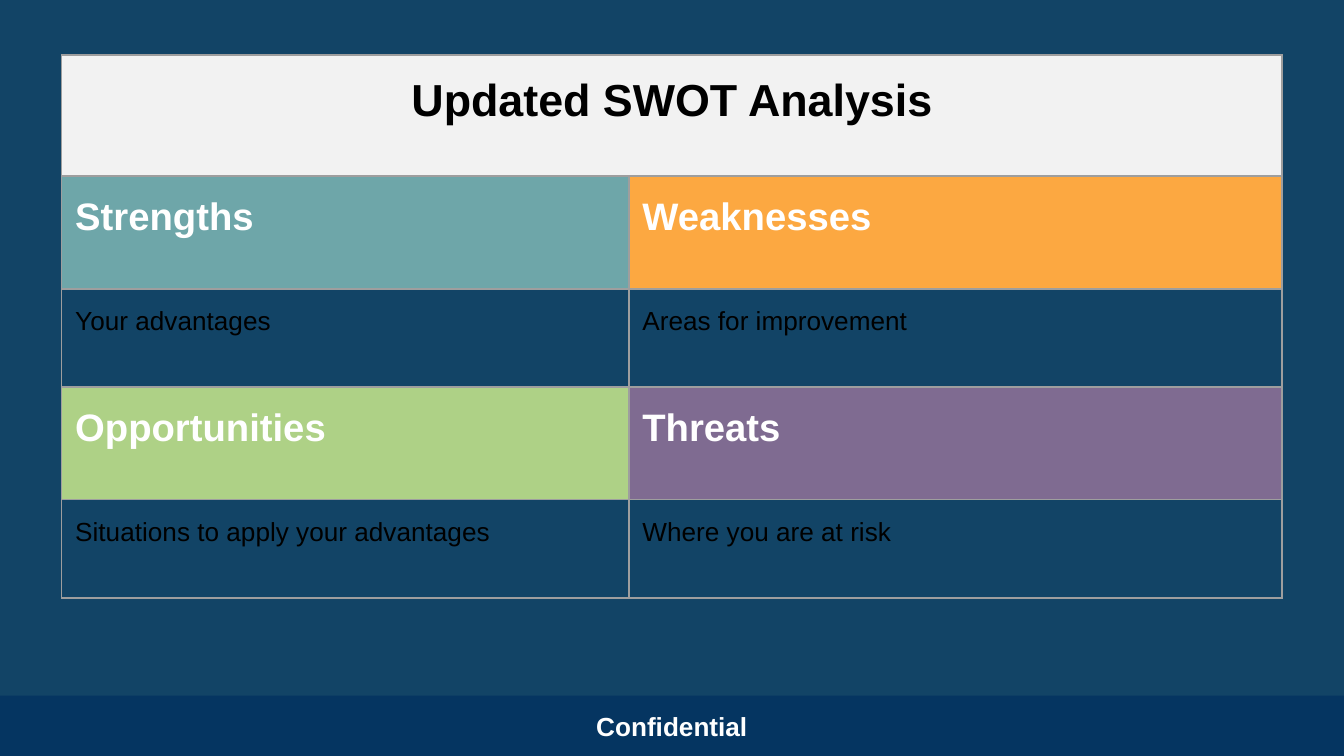
from dataclasses import dataclass

from lxml.etree import SubElement
from pptx import Presentation
from pptx.dml.color import RGBColor
from pptx.enum.shapes import MSO_SHAPE
from pptx.enum.text import MSO_ANCHOR, PP_ALIGN
from pptx.oxml.ns import qn
from pptx.util import Inches, Pt


@dataclass(frozen=True)
class Theme:
    """Colours, font and type sizes of the slide."""

    background: str = "124466"
    footer: str = "053561"
    banner: str = "F2F2F2"
    border: str = "9E9E9E"
    dark: str = "000000"
    light: str = "FFFFFF"
    strengths: str = "6EA6A9"
    weaknesses: str = "FCA841"
    opportunities: str = "AED186"
    threats: str = "7F6B91"
    font: str = "Arial"
    title_size: float = 24
    heading_size: float = 20.5
    body_size: float = 14


THEME = Theme()
SLIDE_WIDTH = Inches(10)
SLIDE_HEIGHT = SLIDE_WIDTH * 9 // 16
FOOTER_HEIGHT = Inches(0.45)
COLUMN_WIDTHS = (4.22, 4.86)
ROW_HEIGHTS = (0.9, 0.84, 0.73, 0.84, 0.73)
QUADRANT_ROWS = (
    (
        ("Strengths", "Your advantages", THEME.strengths),
        ("Weaknesses", "Areas for improvement", THEME.weaknesses),
    ),
    (
        ("Opportunities", "Situations to apply your advantages", THEME.opportunities),
        ("Threats", "Where you are at risk", THEME.threats),
    ),
)
TITLE_STYLE = {"size": Pt(THEME.title_size), "bold": True, "color": THEME.dark}
HEADING_STYLE = {"size": Pt(THEME.heading_size), "bold": True, "color": THEME.light}
BODY_STYLE = {"size": Pt(THEME.body_size), "bold": False, "color": THEME.dark}
FOOTER_STYLE = {"size": Pt(THEME.body_size), "bold": True, "color": THEME.light}
CELL_PARAGRAPH = {"line_spacing": 1.15, "space_before": Pt(12), "space_after": Pt(12)}
MARGINS = dict.fromkeys(
    ("margin_left", "margin_right", "margin_top", "margin_bottom"), Inches(0.1)
)


def set_attributes(target, values):
    """Set each named format value on the target."""
    for name, value in values.items():
        setattr(target, name, value)


def paint(fill, color):
    """Apply a solid colour, or no fill when there is no colour."""
    if color is None:
        fill.background()
    else:
        fill.solid()
        fill.fore_color.rgb = RGBColor.from_string(color)


def write_text(text_frame, text, style, paragraph_format):
    """Write one formatted paragraph."""
    paragraph = text_frame.paragraphs[0]
    set_attributes(paragraph, paragraph_format)
    run = paragraph.add_run()
    run.text = text
    set_attributes(
        run.font, {"name": THEME.font, "size": style["size"], "bold": style["bold"]}
    )
    run.font.color.rgb = RGBColor.from_string(style["color"])


def add_borders(cell):
    """Draw a thin line on all four sides of a cell."""
    properties = cell._tc.get_or_add_tcPr()
    for side in ("lnL", "lnR", "lnT", "lnB"):
        line = SubElement(properties, qn(f"a:{side}"), w=str(Pt(0.75)))
        fill = SubElement(line, qn("a:solidFill"))
        SubElement(fill, qn("a:srgbClr"), val=THEME.border)


def fill_cell(cell, text, style, color=None, alignment=PP_ALIGN.LEFT):
    """Write the text of a cell and paint it."""
    set_attributes(cell, MARGINS)
    paint(cell.fill, color)
    write_text(cell.text_frame, text, style, {**CELL_PARAGRAPH, "alignment": alignment})


def add_swot_table(slide):
    """Add the title row and the four quadrants as a table."""
    table = slide.shapes.add_table(
        len(ROW_HEIGHTS), len(COLUMN_WIDTHS), Inches(0.46), Inches(0.41),
        Inches(sum(COLUMN_WIDTHS)), Inches(sum(ROW_HEIGHTS)),
    ).table
    set_attributes(table, {"first_row": False, "horz_banding": False})
    for column, width in zip(table.columns, COLUMN_WIDTHS):
        column.width = Inches(width)
    for row, height in zip(table.rows, ROW_HEIGHTS):
        row.height = Inches(height)
    for cell in table.iter_cells():
        add_borders(cell)
    banner = table.cell(0, 0)
    banner.merge(table.cell(0, 1))
    fill_cell(
        banner, "Updated SWOT Analysis", TITLE_STYLE, THEME.banner, PP_ALIGN.CENTER
    )
    for index, quadrants in enumerate(QUADRANT_ROWS):
        heading_row = 1 + 2 * index
        for column, (heading, body, color) in enumerate(quadrants):
            fill_cell(table.cell(heading_row, column), heading, HEADING_STYLE, color)
            fill_cell(table.cell(heading_row + 1, column), body, BODY_STYLE)


def add_footer(slide):
    """Add the full-width band at the bottom."""
    band = slide.shapes.add_shape(
        MSO_SHAPE.RECTANGLE, 0, SLIDE_HEIGHT - FOOTER_HEIGHT, SLIDE_WIDTH, FOOTER_HEIGHT
    )
    band.shadow.inherit = False
    paint(band.fill, THEME.footer)
    band.line.fill.background()
    set_attributes(
        band.text_frame,
        {**MARGINS, "word_wrap": True, "vertical_anchor": MSO_ANCHOR.MIDDLE},
    )
    write_text(
        band.text_frame, "Confidential", FOOTER_STYLE, {"alignment": PP_ALIGN.CENTER}
    )


def main():
    """Build the slide and save it."""
    presentation = Presentation()
    set_attributes(
        presentation, {"slide_width": SLIDE_WIDTH, "slide_height": SLIDE_HEIGHT}
    )
    slide = presentation.slides.add_slide(presentation.slide_layouts[6])
    paint(slide.background.fill, THEME.background)
    add_swot_table(slide)
    add_footer(slide)
    presentation.save("out.pptx")


if __name__ == "__main__":
    main()
